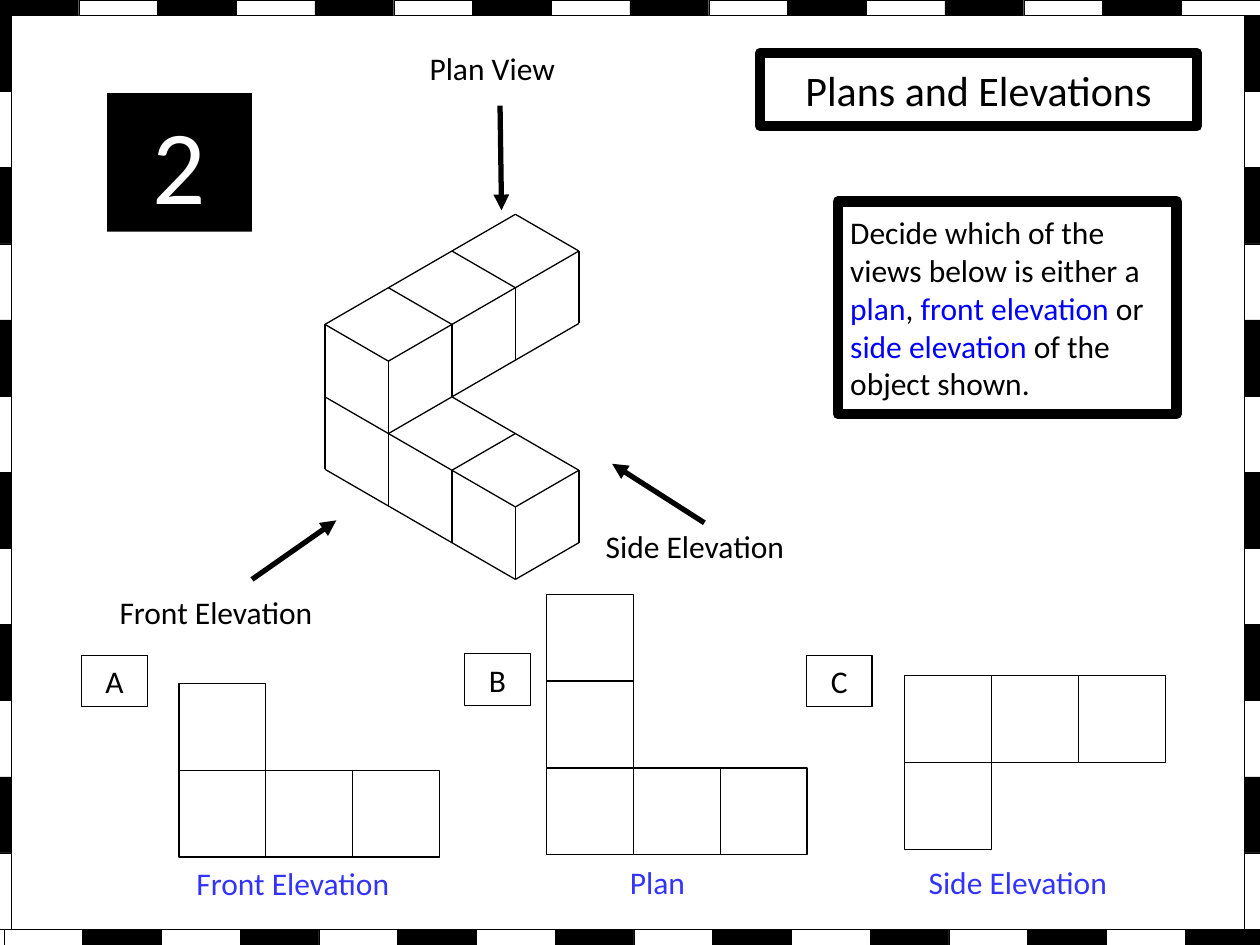
from lxml import etree
from pptx import Presentation
from pptx import util as u
from pptx.dml.color import RGBColor
from pptx.enum import shapes, text
from pptx.oxml.ns import qn

COLOURS = {"black": "000000", "white": "FFFFFF", "term": "0000FF", "answer": "3333FF"}
WIDTH, HEIGHT = 25.4, 19.05
SQUARE = 1.75


def colour(name):
    return RGBColor.from_string(COLOURS[name])


class Worksheet:
    font = "Calibri"
    size = 18

    def __init__(self, slide):
        self.slide = slide

    def add_wording(self, shape, runs, size=None, align=text.PP_ALIGN.LEFT):
        """Fill a shape with one paragraph of (wording, colour name) runs."""
        text_frame = shape.text_frame
        text_frame.word_wrap = True
        paragraph = text_frame.paragraphs[0]
        paragraph.alignment = align
        for wording, name in runs:
            run = paragraph.add_run()
            run.text = wording
            run.font.name = self.font
            run.font.size = u.Pt(size or self.size)
            run.font.color.rgb = colour(name)

    def box(self, left, top, width, height, fill=None, line=0.75):
        shape = self.slide.shapes.add_shape(
            shapes.MSO_SHAPE.RECTANGLE, u.Cm(left), u.Cm(top), u.Cm(width), u.Cm(height))
        shape.shadow.inherit = False
        if fill:
            shape.fill.solid()
            shape.fill.fore_color.rgb = colour(fill)
        else:
            shape.fill.background()
        if line:
            shape.line.color.rgb = colour("black")
            shape.line.width = u.Pt(line)
        else:
            shape.line.fill.background()
        shape.text_frame.vertical_anchor = text.MSO_ANCHOR.MIDDLE
        return shape

    def label(self, wording, left, top, width, name="black"):
        shape = self.slide.shapes.add_textbox(u.Cm(left), u.Cm(top), u.Cm(width), u.Cm(1.02))
        self.add_wording(shape, [(wording, name)])

    def line(self, start, end, width=0.75, arrow=False):
        connector = self.slide.shapes.add_connector(
            shapes.MSO_CONNECTOR.STRAIGHT, *(u.Cm(value) for value in (*start, *end)))
        connector.line.color.rgb = colour("black")
        connector.line.width = u.Pt(width)
        properties = connector._element.spPr
        if arrow:
            etree.SubElement(properties.find(qn("a:ln")), qn("a:tailEnd"), type="triangle")
        etree.SubElement(properties, qn("a:effectLst"))

    def squares(self, left, top, cells):
        for column, row in cells:
            self.box(left + column * SQUARE, top + row * SQUARE, SQUARE, SQUARE)

    def border(self, left, top, width, height, count, step, first="black"):
        """Lay alternating tiles, each moved from the last by step (x, y)."""
        second = "white" if first == "black" else "black"
        for index in range(count):
            self.box(left + index * step[0], top + index * step[1], width, height,
                     fill=(first, second)[index % 2], line=0.25)


def isometric(along, back, down):
    """Place a cube corner, counted in cubes from the top of the front-left edge."""
    return 6.55 + 1.28 * (along + back), 6.54 + 0.74 * (along - back) + 1.46 * down


CUBE_EDGES = [
    # Edges running along the front
    ((0, 0, 2), (3, 0, 2)), ((0, 0, 1), (3, 0, 1)), ((1, 1, 1), (3, 1, 1)),
    *(((0, back, 0), (1, back, 0)) for back in range(4)),
    # Edges running towards the back
    ((0, 0, 0), (0, 3, 0)), ((1, 0, 0), (1, 3, 0)), ((1, 0, 1), (1, 3, 1)),
    ((2, 0, 1), (2, 1, 1)), ((3, 0, 1), (3, 1, 1)), ((3, 0, 2), (3, 1, 2)),
    # Upright edges
    ((0, 0, 0), (0, 0, 2)), ((1, 0, 0), (1, 0, 2)), ((2, 0, 1), (2, 0, 2)),
    ((3, 0, 1), (3, 0, 2)), ((3, 1, 1), (3, 1, 2)),
    *(((1, back, 0), (1, back, 1)) for back in (1, 2, 3)),
]

# Wording, label left, top and width, arrow start and end
DIRECTIONS = [
    ("Front Elevation", 2.16, 11.84, 4.95, (5.08, 11.68), (6.78, 10.49)),
    ("Side Elevation", 11.96, 10.49, 4.95, (14.2, 10.54), (12.34, 9.35)),
    ("Plan View", 8.41, 0.86, 3.56, (10.08, 2.13), (10.11, 4.24)),
]

# Letter, its left and top, squares' left and top, cells, answer, its left and top
VIEWS = [
    ("A", 1.65, 13.21, 3.61, 13.78, [(0, 0), (0, 1), (1, 1), (2, 1)],
     "Front Elevation", 3.71, 17.3),
    ("B", 9.37, 13.18, 11.02, 11.98, [(0, 0), (0, 1), (0, 2), (1, 2), (2, 2)],
     "Plan", 12.45, 17.27),
    ("C", 16.26, 13.21, 18.24, 13.62, [(0, 0), (1, 0), (2, 0), (0, 1)],
     "Side Elevation", 18.47, 17.27),
]

INSTRUCTION = [
    ("Decide which of the views below is either a ", "black"), ("plan", "term"),
    (", ", "black"), ("front elevation", "term"), (" or ", "black"),
    ("side elevation", "term"), (" of the object shown.", "black"),
]


def main():
    presentation = Presentation()
    presentation.slide_width = u.Cm(WIDTH)
    presentation.slide_height = u.Cm(HEIGHT)
    sheet = Worksheet(presentation.slides.add_slide(presentation.slide_layouts[6]))
    centre = text.PP_ALIGN.CENTER

    tile, side_tile, depth = WIDTH / 16, 1.535, 0.31
    sheet.border(0, 0, tile, depth, 16, (tile, 0))
    sheet.border(0.08, 18.74, tile, depth, 16, (tile, 0), first="white")
    for left in (-0.09, 25.09):
        sheet.border(left, depth, depth, side_tile, 12, (0, side_tile))

    title = sheet.box(15.32, 1.07, 8.81, 1.47, line=6)
    sheet.add_wording(title, [("Plans and Elevations", "black")], size=24, align=centre)
    number = sheet.box(2.16, 1.88, 2.92, 2.79, fill="black", line=None)
    sheet.add_wording(number, [("2", "white")], size=60, align=centre)
    sheet.add_wording(sheet.box(16.89, 4.06, 6.83, 4.29, line=6), INSTRUCTION)

    for start, end in CUBE_EDGES:
        sheet.line(isometric(*start), isometric(*end))
    for wording, left, top, width, start, end in DIRECTIONS:
        sheet.label(wording, left, top, width)
        sheet.line(start, end, width=3, arrow=True)

    for letter, left, top, grid_left, grid_top, cells, answer, answer_left, answer_top in VIEWS:
        sheet.add_wording(sheet.box(left, top, 1.32, 1.04), [(letter, "black")], align=centre)
        sheet.squares(grid_left, grid_top, cells)
        sheet.label(answer, answer_left, answer_top, 5.5, "answer")

    presentation.save("out.pptx")


if __name__ == "__main__":
    main()
